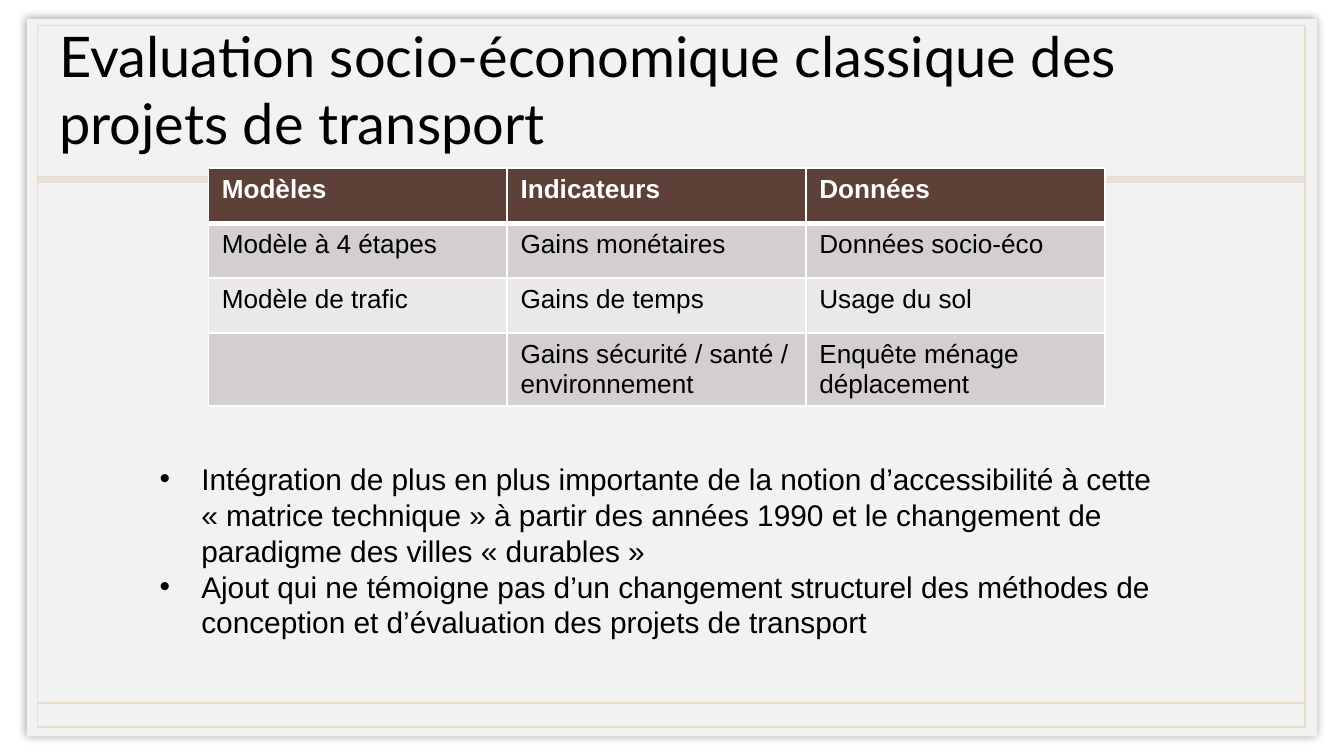
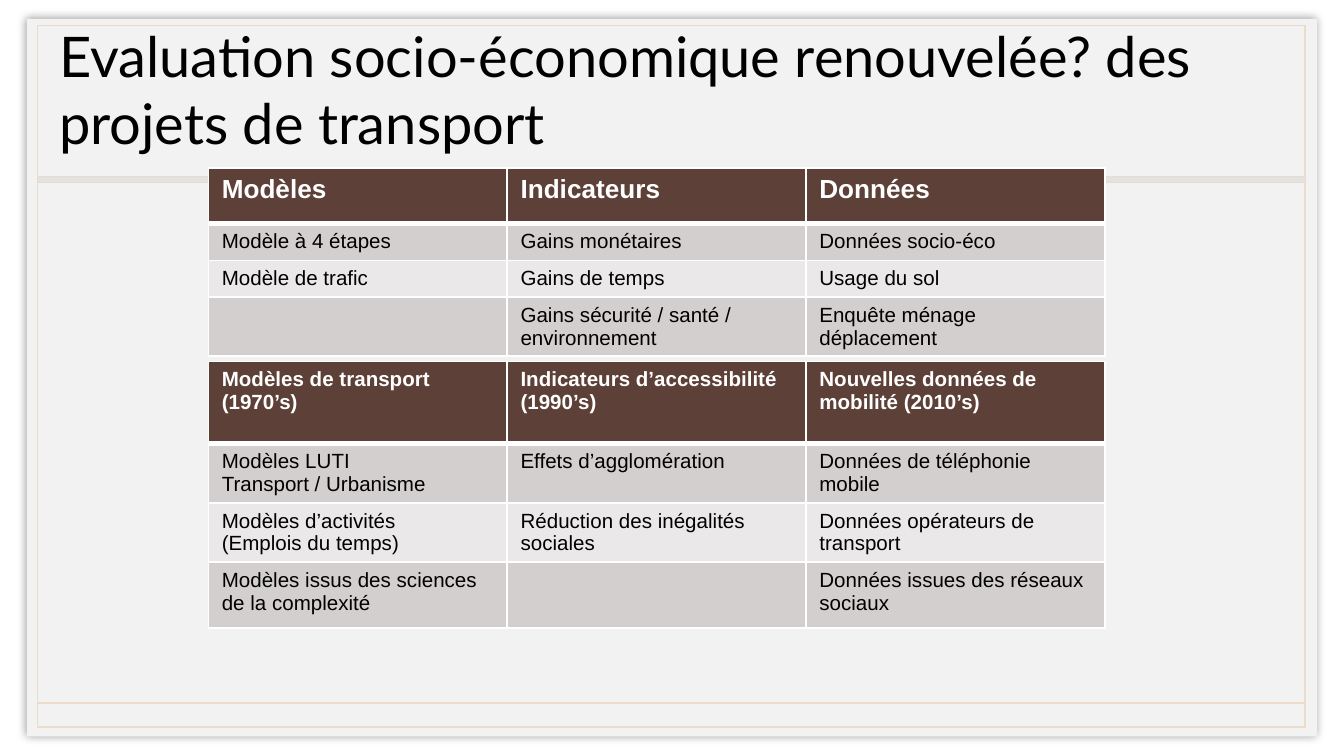
import pptx
import pptx.dml.color
import pptx.enum.shapes
import pptx.enum.text
import pptx.oxml.ns
import pptx.util
import lxml.etree

Inches = pptx.util.Inches
Pt = pptx.util.Pt
qn = pptx.oxml.ns.qn

COLORS = {
    "paper": "F2F2F2",
    "frame": "EBDBC9",
    "band": "E2E2E2",
    "header": "5D4037",
    "odd": "D2CFCE",
    "even": "EAE8E8",
    "text": "000000",
    "white": "FFFFFF",
}
TABLE_LEFT = 1.55
TABLE_WIDTH = 6.67

CLASSIC_ROWS = [
    ["Modèles", "Indicateurs", "Données"],
    ["Modèle à 4 étapes", "Gains monétaires", "Données socio-éco"],
    ["Modèle de trafic", "Gains de temps", "Usage du sol"],
    ["", "Gains sécurité / santé / environnement", "Enquête ménage déplacement"],
]
RENEWED_ROWS = [
    ["Modèles de transport (1970’s)", "Indicateurs d’accessibilité (1990’s)",
     "Nouvelles données de mobilité (2010’s)"],
    ["Modèles LUTI\nTransport / Urbanisme", "Effets d’agglomération",
     "Données de téléphonie mobile"],
    ["Modèles d’activités\n(Emplois du temps)", "Réduction des inégalités sociales",
     "Données opérateurs de transport"],
    ["Modèles issus des sciences de la complexité", "",
     "Données issues des réseaux sociaux"],
]
BULLETS = [
    "Intégration de plus en plus importante de la notion d’accessibilité à cette "
    "« matrice technique » à partir des années 1990 et le changement de "
    "paradigme des villes « durables »",
    "Ajout qui ne témoigne pas d’un changement structurel des méthodes de "
    "conception et d’évaluation des projets de transport",
]
PAGES = [
    {
        "title": "Evaluation socio-économique classique des projets de transport",
        "tables": [(1.25, CLASSIC_ROWS, [0.41, 0.41, 0.41, 0.54], 14, 14)],
        "bullets": BULLETS,
    },
    {
        "title": "Evaluation socio-économique renouvelée? des projets de transport",
        "tables": [
            (1.25, CLASSIC_ROWS, [0.41, 0.28, 0.27, 0.44], 14, 11),
            (2.69, RENEWED_ROWS, [0.61, 0.44, 0.44, 0.49], 11, 11),
        ],
        "bullets": [],
    },
]


def rgb(name):
    return pptx.dml.color.RGBColor.from_string(COLORS[name])


def add_span(para, text, size, color="text", font="Arial", bold=False):
    span = para.add_run()
    span.text = text
    span.font.size = Pt(size)
    span.font.name = font
    span.font.bold = bold
    span.font.color.rgb = rgb(color)


deck = pptx.Presentation()
deck.slide_width = Inches(10)
deck.slide_height = Inches(10 * 9 / 16)
layout = deck.slide_layouts.get_by_name("Title Only")
pages = [deck.slides.add_slide(layout) for content in PAGES]

decor = []
for left, top, width, height, fill, line_width in [
    (0.2, 0.14, 9.6, 5.34, "paper", 0),
    (0.28, 0.19, 9.43, 5.22, None, 1),
    (0.28, 1.31, 9.43, 0.05, "band", 0.25),
]:
    box = pages[0].shapes.add_shape(
        pptx.enum.shapes.MSO_SHAPE.RECTANGLE,
        Inches(left), Inches(top), Inches(width), Inches(height))
    box.shadow.inherit = False
    if fill:
        box.fill.solid()
        box.fill.fore_color.rgb = rgb(fill)
    else:
        box.fill.background()
    if line_width:
        box.line.color.rgb = rgb("frame")
        box.line.width = Pt(line_width)
    else:
        box.line.fill.background()
    decor.append(box)

effects = decor[0].element.spPr.find(qn("a:effectLst"))
shadow = lxml.etree.SubElement(
    effects, qn("a:outerShdw"), blurRad=str(Pt(5)), dist="0", dir="0",
    algn="ctr", rotWithShape="0")
shade = lxml.etree.SubElement(shadow, qn("a:srgbClr"), val=COLORS["text"])
lxml.etree.SubElement(shade, qn("a:alpha"), val="40000")

rule = pages[0].shapes.add_connector(
    pptx.enum.shapes.MSO_CONNECTOR.STRAIGHT,
    Inches(0.28), Inches(5.23), Inches(9.71), Inches(5.23))
rule.line.color.rgb = rgb("frame")
rule.line.width = Pt(1)
lxml.etree.SubElement(rule.element.spPr, qn("a:effectLst"))
decor.insert(2, rule)

for index, shape in enumerate(decor):
    shape.element.xpath(".//p:cNvPr")[0].set("id", str(20 + index))
    layout.shapes.element.insert(2 + index, shape.element)

for page, content in zip(pages, PAGES):
    title = page.shapes.title
    title.left, title.top = Inches(0.34), Inches(0.35)
    title.width, title.height = Inches(9.32), Inches(0.91)
    frame = title.text_frame
    frame.word_wrap = True
    frame.auto_size = pptx.enum.text.MSO_AUTO_SIZE.NONE
    frame.vertical_anchor = pptx.enum.text.MSO_ANCHOR.BOTTOM
    frame.margin_left = frame.margin_right = Inches(0.1)
    frame.margin_top = frame.margin_bottom = Inches(0.1)
    para = frame.paragraphs[0]
    para.alignment = pptx.enum.text.PP_ALIGN.LEFT
    add_span(para, content["title"], 30, font="Lato")

    for top, rows, heights, header_size, body_size in content["tables"]:
        table = page.shapes.add_table(
            len(rows), len(rows[0]), Inches(TABLE_LEFT), Inches(top),
            Inches(TABLE_WIDTH), Inches(sum(heights))).table
        table.first_row = False
        table.horz_banding = False
        for row_index, (texts, height) in enumerate(zip(rows, heights)):
            table.rows[row_index].height = Inches(height)
            is_header = row_index == 0
            size = header_size if is_header else body_size
            color = "white" if is_header else "text"
            fill = "header" if is_header else "odd" if row_index % 2 else "even"
            borders = {"L": 1, "R": 1, "T": 3 if row_index == 1 else 1,
                       "B": 3 if is_header else 1}
            for column_index, text in enumerate(texts):
                cell = table.cell(row_index, column_index)
                cell.fill.solid()
                cell.fill.fore_color.rgb = rgb(fill)
                frame = cell.text_frame
                for line_index, line in enumerate(text.split("\n") if text else []):
                    para = frame.add_paragraph() if line_index else frame.paragraphs[0]
                    add_span(para, line, size, color, bold=is_header)
                properties = cell._tc.get_or_add_tcPr()
                for position, (side, weight) in enumerate(borders.items()):
                    border = properties.makeelement(qn("a:ln" + side), w=str(Pt(weight)))
                    paint = lxml.etree.SubElement(border, qn("a:solidFill"))
                    lxml.etree.SubElement(paint, qn("a:srgbClr"), val=COLORS["white"])
                    properties.insert(position, border)

    if content["bullets"]:
        box = page.shapes.add_textbox(Inches(1.09), Inches(3.38), Inches(7.6), Inches(1.45))
        frame = box.text_frame
        frame.word_wrap = True
        frame.auto_size = pptx.enum.text.MSO_AUTO_SIZE.SHAPE_TO_FIT_TEXT
        for index, text in enumerate(content["bullets"]):
            para = frame.add_paragraph() if index else frame.paragraphs[0]
            add_span(para, text, 16)
            properties = para._p.get_or_add_pPr()
            properties.set("marL", str(Inches(0.31)))
            properties.set("indent", str(-Inches(0.31)))
            paint = lxml.etree.SubElement(properties, qn("a:buClr"))
            lxml.etree.SubElement(paint, qn("a:srgbClr"), val=COLORS["text"])
            lxml.etree.SubElement(properties, qn("a:buFont"), typeface="Arial")
            lxml.etree.SubElement(properties, qn("a:buChar"), char="•")

deck.save("out.pptx")
